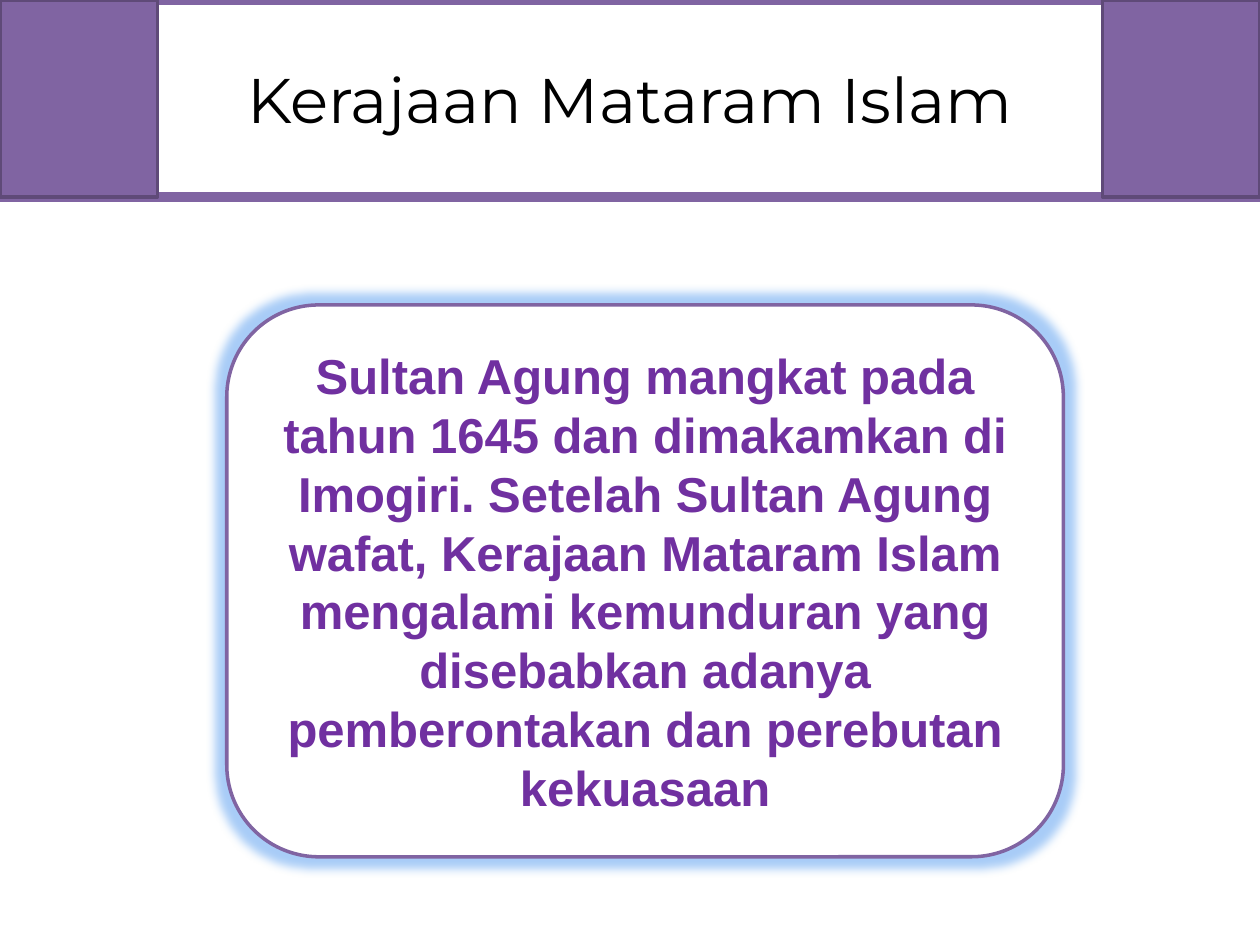
"""Build a slide on the decline of the Mataram Islam kingdom."""
from lxml import etree
from pptx import Presentation
from pptx import util as u
from pptx.dml.color import RGBColor
from pptx.enum import shapes, text
from pptx.oxml import ns

COLORS = {"white": "FFFFFF", "purple": "8064A2", "dark": "5F4A78",
          "title": "000000", "body": "7030A0", "glow": "A8CCF7"}
WIDTH, HEIGHT = 720, 540
BANNER_HEIGHT, SIDE_WIDTH = 112.5, 90
CARD = (129.6, 174.24, 478.08, 315.36)
GLOW_RADIUS = 11
TITLE = "Kerajaan Mataram Islam"
BODY = ("Sultan Agung mangkat pada tahun 1645 dan dimakamkan di Imogiri. "
        "Setelah Sultan Agung wafat, Kerajaan Mataram Islam mengalami kemunduran "
        "yang disebabkan adanya pemberontakan dan perebutan kekuasaan")


def color(name):
    return RGBColor.from_string(COLORS[name])


def add_box(page, kind, bounds, fill, line, weight):
    box = page.shapes.add_shape(kind, *(u.Pt(value) for value in bounds))
    box.shadow.inherit = False
    box.fill.solid()
    box.fill.fore_color.rgb = color(fill)
    box.line.color.rgb = color(line)
    box.line.width = u.Pt(weight)
    return box


def write(box, words, font, size, shade, bold=False):
    frame = box.text_frame
    frame.text = words
    frame.word_wrap = True
    frame.vertical_anchor = text.MSO_ANCHOR.MIDDLE
    para = frame.paragraphs[0]
    para.alignment = text.PP_ALIGN.CENTER
    span = para.runs[0].font
    span.name, span.size, span.bold = font, u.Pt(size), bold
    span.color.rgb = color(shade)


def add_glow(box, shade, radius):
    effects = box._element.spPr.find(ns.qn("a:effectLst"))
    glow = etree.SubElement(effects, ns.qn("a:glow"), rad=str(u.Pt(radius)))
    etree.SubElement(glow, ns.qn("a:srgbClr"), val=COLORS[shade])


def main():
    deck = Presentation()
    deck.slide_width, deck.slide_height = u.Pt(WIDTH), u.Pt(HEIGHT)
    page = deck.slides.add_slide(deck.slide_layouts[6])
    rectangle = shapes.MSO_SHAPE.RECTANGLE

    banner = add_box(page, rectangle, (0, 0, WIDTH, BANNER_HEIGHT), "white", "purple", 6)
    write(banner, TITLE, "Montserrat", 36, "title")
    for left in (0, WIDTH - SIDE_WIDTH):
        add_box(page, rectangle, (left, 0, SIDE_WIDTH, BANNER_HEIGHT), "purple", "dark", 2)

    card = add_box(page, shapes.MSO_SHAPE.ROUNDED_RECTANGLE, CARD, "white", "purple", 2)
    add_glow(card, "glow", GLOW_RADIUS)
    write(card, BODY, "Arial", 28, "body", bold=True)
    deck.save("out.pptx")


if __name__ == "__main__":
    main()
